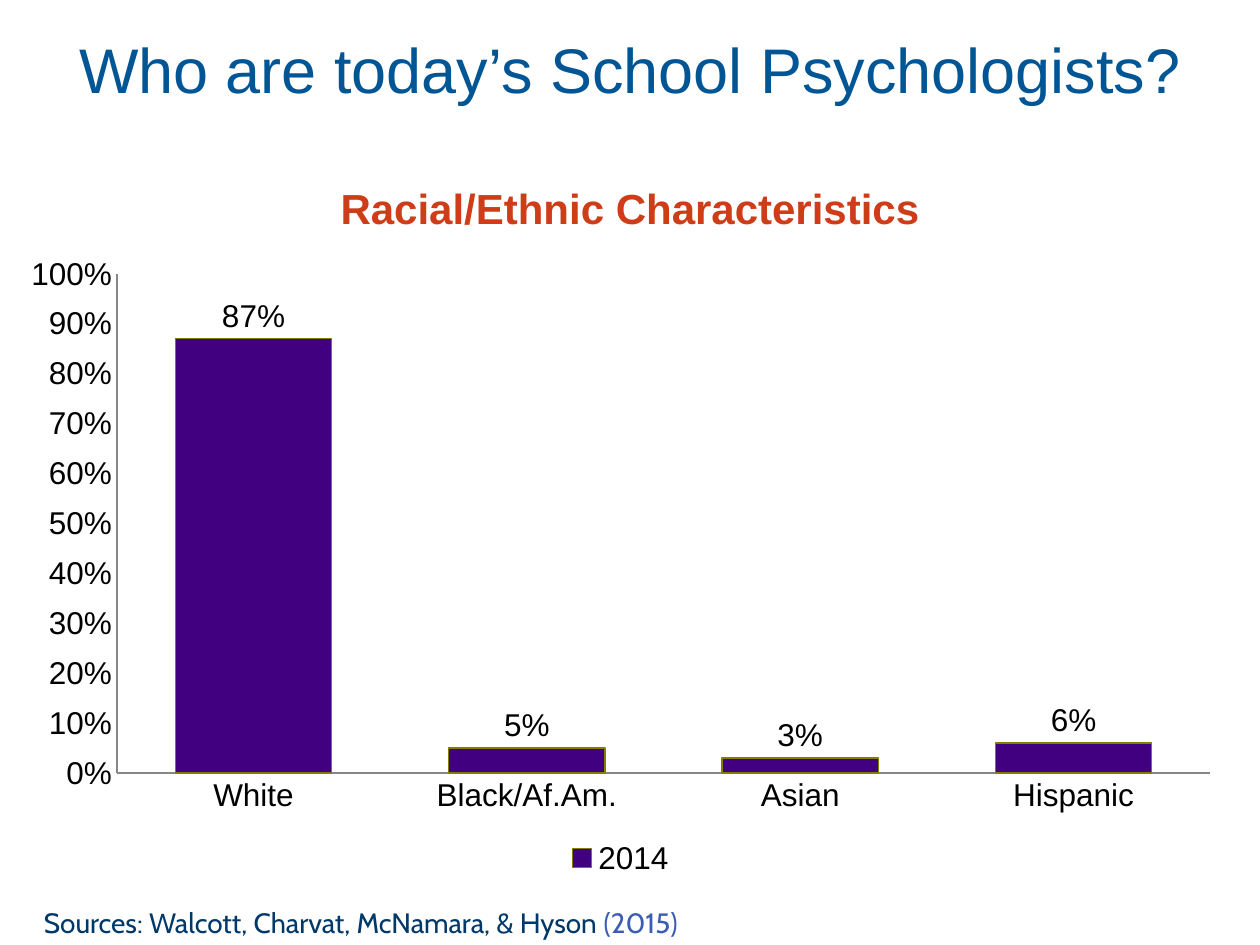
from lxml import etree
from pptx import Presentation
from pptx.chart.data import CategoryChartData
from pptx.dml.color import RGBColor
from pptx.enum.chart import XL_CHART_TYPE, XL_LABEL_POSITION, XL_LEGEND_POSITION, XL_TICK_MARK
from pptx.enum.text import MSO_ANCHOR, MSO_AUTO_SIZE, PP_ALIGN
from pptx.oxml.ns import qn
from pptx.util import Inches, Pt


def rgb(color):
    return RGBColor.from_string(color)


def add_run(p, text, font, size, color, bold=False):
    r = p.add_run()
    r.text = text
    r.font.name = font
    r.font.size = Pt(size)
    r.font.bold = bold
    r.font.color.rgb = rgb(color)


prs = Presentation()
prs.slide_width, prs.slide_height = Inches(10), Inches(7.5)
s = prs.slides.add_slide(prs.slide_layouts[5])

title = s.shapes.title
title.left, title.top = Inches(0.5), Inches(0.42)
title.width, title.height = Inches(9), Inches(1.25)
tf = title.text_frame
tf.auto_size = MSO_AUTO_SIZE.NONE
tf.vertical_anchor = MSO_ANCHOR.MIDDLE
p = tf.paragraphs[0]
p.alignment = PP_ALIGN.CENTER
add_run(p, "Who are today’s School Psychologists?", "Arial", 36, "005695")
p = tf.add_paragraph()
p.alignment = PP_ALIGN.CENTER
p.space_before = Pt(44)
add_run(p, "Racial/Ethnic Characteristics", "Arial", 24, "CE3C18", True)

data = CategoryChartData(number_format="0%")
data.categories = ["White", "Black/Af.Am.", "Asian", "Hispanic"]
data.add_series("2014", [0.87, 0.05, 0.03, 0.06])
chart = s.shapes.add_chart(XL_CHART_TYPE.COLUMN_CLUSTERED, Inches(0.05), Inches(1.92),
                           Inches(9.75), Inches(5.08), data).chart
chart.has_title = False
chart.font.name = "Arial"
chart.font.size = Pt(18)
chart.font.color.rgb = rgb("000000")
chart.has_legend = True
chart.legend.position = XL_LEGEND_POSITION.BOTTOM
chart.legend.include_in_layout = False

for axis in (chart.category_axis, chart.value_axis):
    axis.major_tick_mark = XL_TICK_MARK.NONE
    axis.minor_tick_mark = XL_TICK_MARK.NONE
    axis.has_major_gridlines = False
    axis.format.line.color.rgb = rgb("868686")
    axis.format.line.width = Pt(0.75)
axis = chart.value_axis
axis.minimum_scale, axis.maximum_scale, axis.major_unit = 0, 1, 0.1
axis.tick_labels.number_format = "0%"
axis.tick_labels.number_format_is_linked = False

plot = chart.plots[0]
plot.gap_width = 75
plot.vary_by_categories = False
plot.has_data_labels = True
labels = plot.data_labels
labels.show_value = True
labels.number_format = "0%"
labels.number_format_is_linked = False
labels.position = XL_LABEL_POSITION.OUTSIDE_END
bars = plot.series[0].format
bars.fill.solid()
bars.fill.fore_color.rgb = rgb("400080")
bars.line.color.rgb = rgb("808000")
bars.line.width = Pt(0.75)

area = chart.element.find(".//" + qn("c:plotArea"))
layout = area.find(qn("c:layout"))
if layout is None:
    layout = etree.Element(qn("c:layout"))
    area.insert(0, layout)
manual = etree.SubElement(layout, qn("c:manualLayout"))
for tag, val in [("layoutTarget", "inner"), ("xMode", "edge"), ("yMode", "edge"),
                 ("x", "0.09"), ("y", "0.05"), ("w", "0.89"), ("h", "0.78")]:
    etree.SubElement(manual, qn("c:" + tag)).set("val", val)

sources = s.shapes.add_textbox(Inches(0.25), Inches(6.86), Inches(7.08), Inches(0.64))
tf = sources.text_frame
tf.word_wrap = True
tf.vertical_anchor = MSO_ANCHOR.BOTTOM
p = tf.paragraphs[0]
add_run(p, "Sources: Walcott, Charvat, McNamara, & Hyson ", "Cabin", 16, "00386A")
add_run(p, "(2015)", "Cabin", 16, "3A5CB2")

prs.save("out.pptx")
